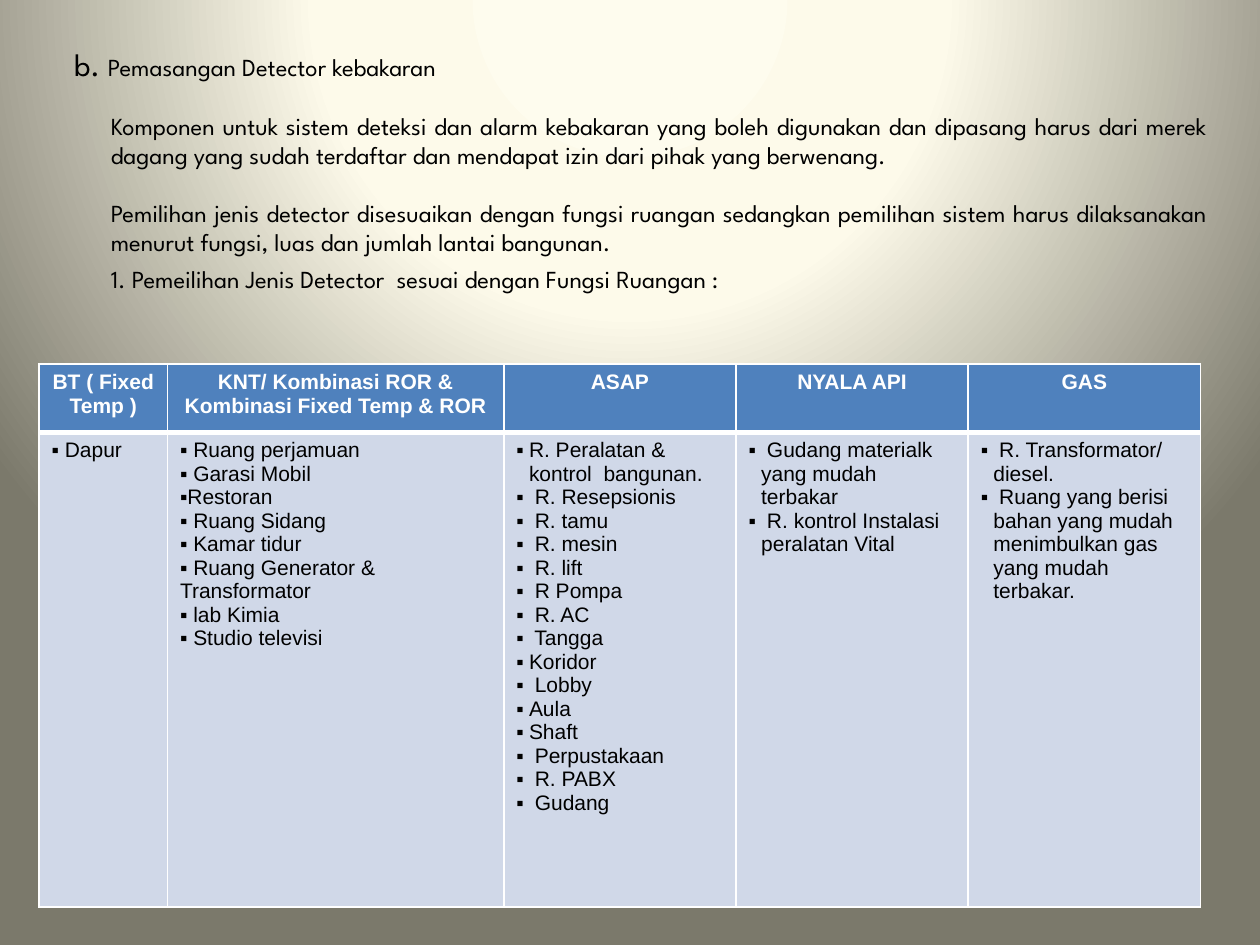
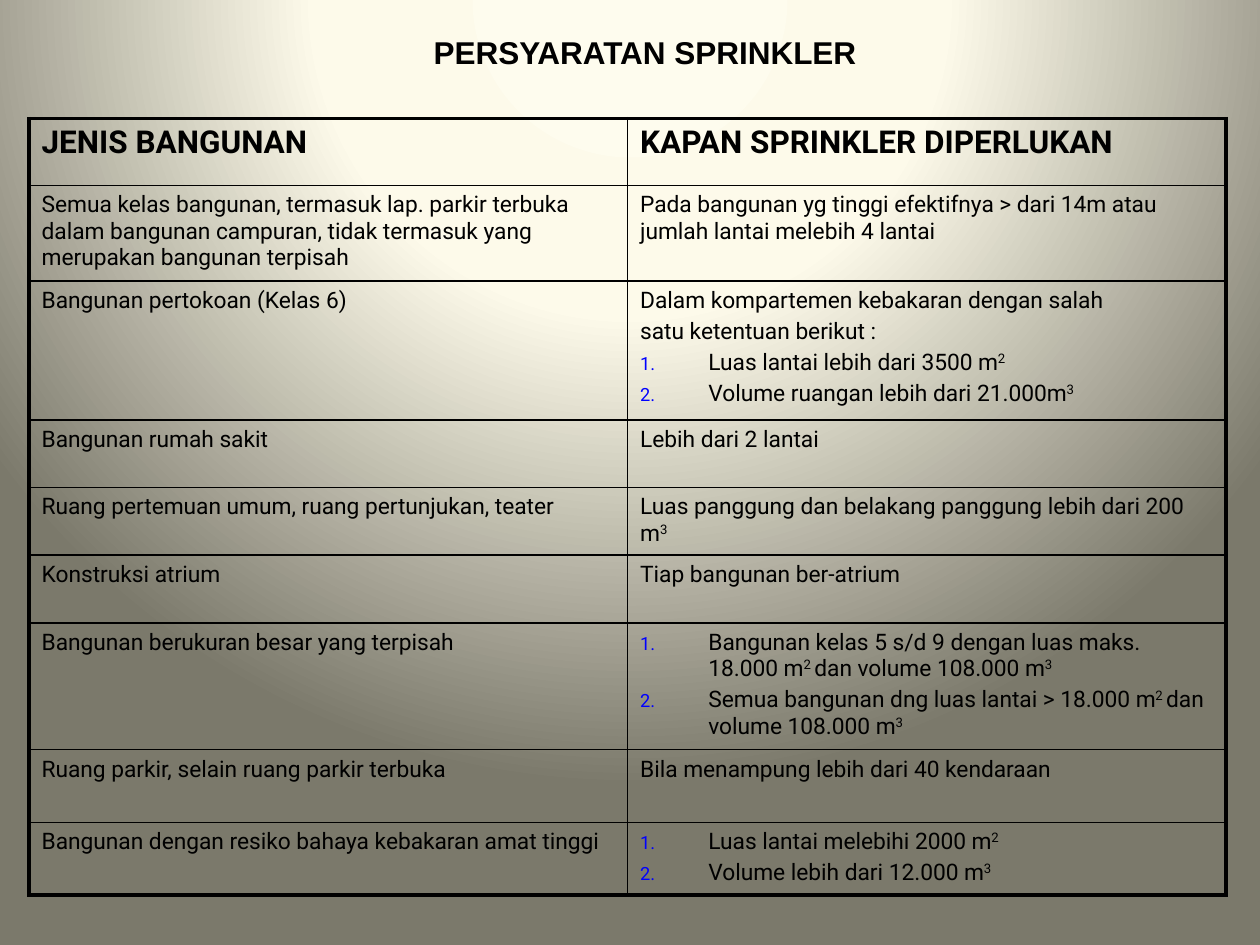
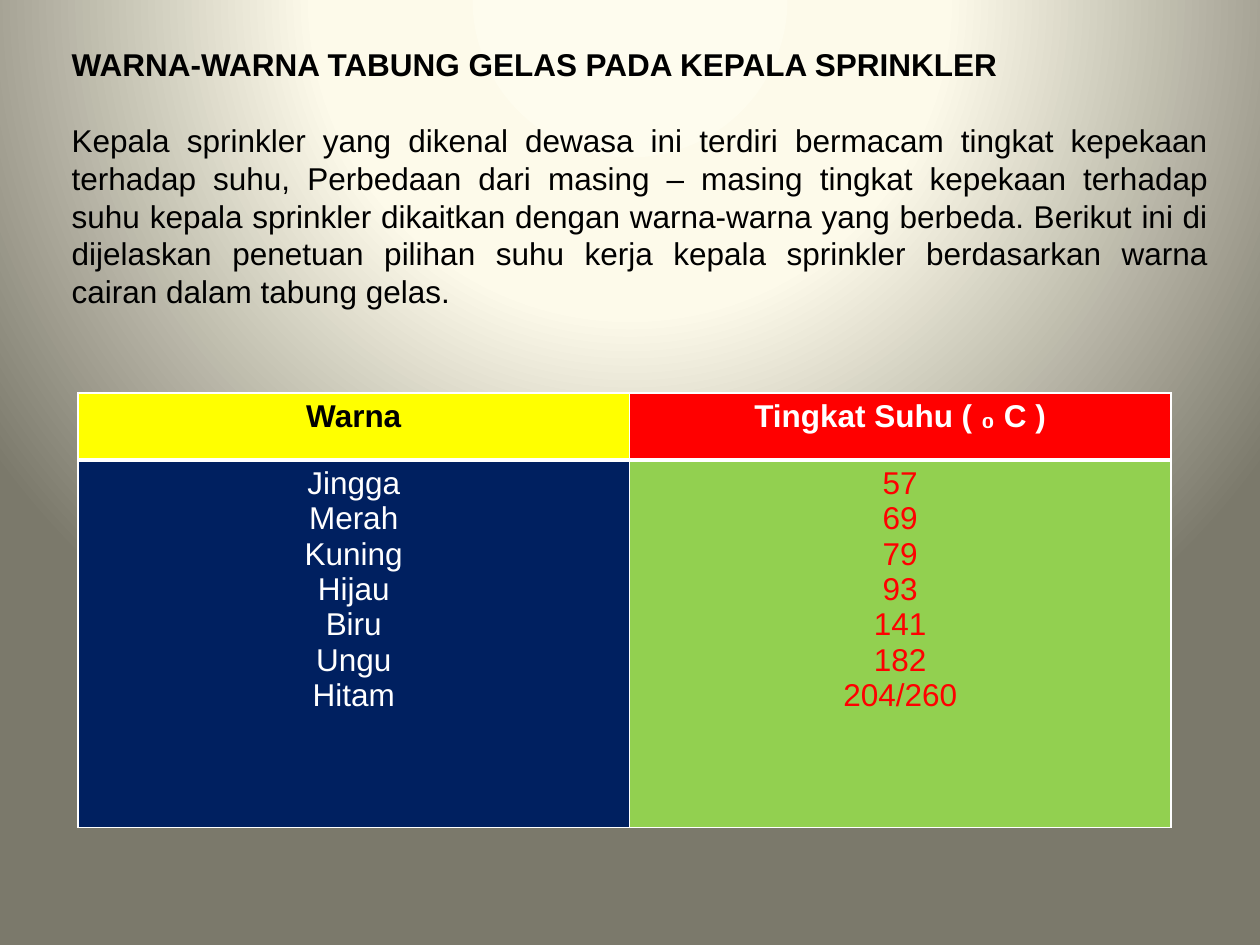
from pptx import Presentation
from pptx import util as u
from pptx.dml import color
from pptx.enum import text
from pptx.oxml import parse_xml
from pptx.oxml.ns import nsdecls

BLACK, WHITE, RED = "000000", "FFFFFF", "FF0000"
HEADER_BLUE, ROW_BLUE, NUMBER_BLUE = "4F81BD", "D0D8E8", "0000FF"
YELLOW, NAVY, GREEN = "FFFF00", "002060", "92D050"
LEFT, CENTER, JUSTIFY = text.PP_ALIGN.LEFT, text.PP_ALIGN.CENTER, text.PP_ALIGN.JUSTIFY
BACKDROP = [(0, "FEFCEE"), (40, "FDFAEA"), (100, "7B796B")]


def rgb(code):
    return color.RGBColor.from_string(code)


def add_grid(slide, left, top, widths, heights, rows, font, sizes, line, outer, divider):
    table = slide.shapes.add_table(
        len(heights), len(widths), u.Pt(left), u.Pt(top),
        u.Pt(sum(widths)), u.Pt(sum(heights))).table
    table.first_row = table.horz_banding = False
    for column, width in zip(table.columns, widths):
        column.width = u.Pt(width)
    last_row, last_column = len(heights) - 1, len(widths) - 1
    for r, (row, height) in enumerate(zip(table.rows, heights)):
        row.height = u.Pt(height)
        size = sizes[0] if r == 0 else sizes[1]
        for c, cell in enumerate(row.cells):
            edges = {
                "lnL": outer if c == 0 else 1,
                "lnR": outer if c == last_column else 1,
                "lnT": outer if r == 0 else divider if r == 1 else 1,
                "lnB": outer if r == last_row else divider if r == 0 else 1,
            }
            for edge, weight in edges.items():
                cell._tc.get_or_add_tcPr().append(parse_xml(
                    f'<a:{edge} {nsdecls("a")} w="{u.Pt(weight)}"><a:solidFill>'
                    f'<a:srgbClr val="{line}"/></a:solidFill></a:{edge}>'))
            cell.fill.background()
            for i, entry in enumerate(rows[r][c]):
                frame = cell.text_frame
                para = frame.paragraphs[0] if i == 0 else frame.add_paragraph()
                for n, piece in enumerate(entry.lstrip("▪#").split("|")):
                    span = para.add_run()
                    span.text = piece
                    span.font.name, span.font.size = font, u.Pt(size)
                    span.font.bold = r == 0
                    span.font.color.rgb = rgb(BLACK)
                    if n % 2:
                        span.font._element.set("baseline", "30000")
                bullets = []
                if entry[0] == "▪":
                    bullets = ['buFont {} typeface="Arial"/>', 'buChar {} char="▪"/>']
                elif entry[0] == "#":
                    para.space_before = u.Pt(size / 5)
                    bullets = ['buClr {}><a:srgbClr val="' + NUMBER_BLUE + '"/></a:buClr>',
                               'buSzPct {} val="80000"/>',
                               'buAutoNum {} type="arabicPeriod"/>']
                    para._p.get_or_add_pPr().set("marL", str(u.Pt(39)))
                    para._p.get_or_add_pPr().set("indent", str(u.Pt(-39)))
                for bullet in bullets:
                    para._p.get_or_add_pPr().append(
                        parse_xml("<a:" + bullet.replace("{}", nsdecls("a"))))
    return table


deck = Presentation()
deck.slide_width, deck.slide_height = u.Pt(720), u.Pt(540)

stops = "".join(f'<a:gs pos="{at * 1000}"><a:srgbClr val="{code}"/></a:gs>'
                for at, code in BACKDROP)
common = deck.slide_master._element.cSld
for old in common.findall("{*}bg"):
    common.remove(old)
common.insert(0, parse_xml(
    f'<p:bg {nsdecls("p", "a")}><p:bgPr><a:gradFill rotWithShape="1"><a:gsLst>{stops}</a:gsLst>'
    '<a:path path="circle"><a:fillToRect l="50000" t="-80000" r="50000" b="180000"/></a:path>'
    '</a:gradFill><a:effectLst/></p:bgPr></p:bg>'))

headings = [
    (1, (28.1, 22.3, 669.6, 30), ["b. ", "Pemasangan Detector kebakaran"],
     "League Spartan", [18, 14], False, LEFT, 21.3, 7),
    (5, (151.9, 16.6, 433.4, 28.8), ["PERSYARATAN SPRINKLER"],
     "Arial", [18], True, CENTER, 20.1, 0),
    (1, (33.8, 22.3, 663.8, 30), ["WARNA-WARNA TABUNG GELAS PADA KEPALA SPRINKLER"],
     "Arial", [18], True, LEFT, 21.6, 0),
]
slides = []
for layout, place, pieces, font, sizes, bold, align, pitch, margin in headings:
    slide = deck.slides.add_slide(deck.slide_layouts[layout])
    slides.append(slide)
    title = slide.shapes.title
    title.left, title.top, title.width, title.height = map(u.Pt, place)
    frame = title.text_frame
    frame.auto_size = text.MSO_AUTO_SIZE.NONE
    frame.vertical_anchor = text.MSO_ANCHOR.TOP
    para = frame.paragraphs[0]
    para.alignment, para.line_spacing = align, u.Pt(pitch)
    para._p.get_or_add_pPr().set("marL", str(u.Pt(margin)))
    for piece, size in zip(pieces, sizes):
        span = para.add_run()
        span.text = piece
        span.font.name, span.font.size, span.font.bold = font, u.Pt(size), bold
        span.font.color.rgb = rgb(BLACK)
detectors, requirements, colours = slides

bodies = [
    (detectors, (28.1, 59.8, 669.6, 117), "League Spartan", 14, 16.6, 28, [
        (0, "Komponen untuk sistem deteksi dan alarm kebakaran yang boleh digunakan dan dipasang "
            "harus dari merek dagang yang sudah terdaftar dan mendapat izin dari pihak yang "
            "berwenang."),
        (16.6, "Pemilihan jenis detector disesuaikan dengan fungsi ruangan sedangkan pemilihan "
               "sistem harus dilaksanakan menurut fungsi, luas dan jumlah lantai bangunan."),
        (4.5, "1. Pemeilihan Jenis Detector  sesuai dengan Fungsi Ruangan :"),
    ]),
    (colours, (33.8, 65.5, 663.8, 117), "Arial", 18, 21.6, 0, [
        (0, "Kepala sprinkler yang dikenal dewasa ini terdiri bermacam tingkat kepekaan terhadap "
            "suhu, Perbedaan dari masing – masing tingkat kepekaan terhadap suhu kepala sprinkler "
            "dikaitkan dengan warna-warna yang berbeda. Berikut ini di dijelaskan penetuan "
            "pilihan suhu kerja kepala sprinkler berdasarkan warna cairan dalam tabung gelas."),
    ]),
]
for slide, place, font, size, pitch, margin, entries in bodies:
    body = slide.placeholders[1]
    body.left, body.top, body.width, body.height = map(u.Pt, place)
    frame = body.text_frame
    frame.auto_size = text.MSO_AUTO_SIZE.NONE
    for i, (gap, entry) in enumerate(entries):
        para = frame.paragraphs[0] if i == 0 else frame.add_paragraph()
        para.text = entry
        para.alignment, para.line_spacing, para.space_before = JUSTIFY, u.Pt(pitch), u.Pt(gap)
        para.font.name, para.font.size = font, u.Pt(size)
        para.font.color.rgb = rgb(BLACK)
        properties = para._p.get_or_add_pPr()
        properties.set("marL", str(u.Pt(margin)))
        properties.set("indent", "0")
        properties.insert_element_before(
            parse_xml(f'<a:buNone {nsdecls("a")}/>'), "a:tabLst", "a:defRPr", "a:extLst")
        for span in para.runs:
            span.font.name, span.font.size = font, u.Pt(size)
            span.font.color.rgb = rgb(BLACK)

detector_rows = [
    [["BT ( Fixed Temp )"], ["KNT/ Kombinasi ROR & Kombinasi Fixed Temp & ROR"],
     ["ASAP"], ["NYALA API"], ["GAS"]],
    [["▪ Dapur"],
     ["▪ Ruang perjamuan", "▪ Garasi Mobil", "▪Restoran", "▪ Ruang Sidang", "▪ Kamar tidur",
      "▪ Ruang Generator & Transformator", "▪ lab Kimia", "▪ Studio televisi"],
     ["▪R. Peralatan & kontrol  bangunan.", "▪ R. Resepsionis", "▪ R. tamu", "▪ R. mesin",
      "▪ R. lift", "▪ R Pompa", "▪ R. AC", "▪ Tangga", "▪Koridor", "▪ Lobby", "▪Aula",
      "▪Shaft", "▪ Perpustakaan", "▪ R. PABX", "▪ Gudang"],
     ["▪ Gudang materialk yang mudah terbakar", "▪ R. kontrol Instalasi peralatan Vital"],
     ["▪ R. Transformator/ diesel.",
      "▪ Ruang yang berisi bahan yang mudah menimbulkan gas yang mudah terbakar."]],
]
table = add_grid(detectors, 22.3, 208.1, [73.4, 192.2] + [132.7] * 3, [38.9, 271.4],
                 detector_rows, "Arial", (12, 12), WHITE, 1, 3)
for c in range(5):
    header, rooms = table.cell(0, c), table.cell(1, c)
    for cell, fill in ((header, HEADER_BLUE), (rooms, ROW_BLUE)):
        cell.fill.solid()
        cell.fill.fore_color.rgb = rgb(fill)
    header.text_frame.paragraphs[0].alignment = CENTER
    header.text_frame.paragraphs[0].runs[0].font.color.rgb = rgb(WHITE)
    for para in rooms.text_frame.paragraphs:
        hang = 7.2 if c > 1 else 0
        para._p.get_or_add_pPr().set("marL", str(u.Pt(hang)))
        para._p.get_or_add_pPr().set("indent", str(u.Pt(-hang)))

requirement_rows = [
    [["JENIS BANGUNAN"], ["KAPAN SPRINKLER DIPERLUKAN"]],
    [["Semua kelas bangunan, termasuk lap. parkir terbuka dalam bangunan campuran, "
      "tidak termasuk yang merupakan bangunan terpisah"],
     ["Pada bangunan yg tinggi efektifnya > dari 14m atau jumlah lantai melebih 4 lantai"]],
    [["Bangunan pertokoan (Kelas 6)"],
     ["Dalam kompartemen kebakaran dengan salah", "satu ketentuan berikut :",
      "#Luas lantai lebih dari 3500 m|2", "#Volume ruangan lebih dari 21.000m|3"]],
    [["Bangunan rumah sakit"], ["Lebih dari 2 lantai"]],
    [["Ruang pertemuan umum, ruang pertunjukan, teater"],
     ["Luas panggung dan belakang panggung lebih dari 200 m|3"]],
    [["Konstruksi atrium"], ["Tiap bangunan ber-atrium"]],
    [["Bangunan berukuran besar yang terpisah"],
     ["#Bangunan kelas 5 s/d 9 dengan luas maks. 18.000 m|2 |dan volume 108.000 m|3",
      "#Semua bangunan dng luas lantai > 18.000 m|2 |dan volume 108.000 m|3"]],
    [["Ruang parkir, selain ruang parkir terbuka"], ["Bila menampung lebih dari 40 kendaraan"]],
    [["Bangunan dengan resiko bahaya kebakaran amat tinggi"],
     ["#Luas lantai melebihi 2000 m|2", "#Volume lebih dari 12.000 m|3"]],
]
table = add_grid(requirements, 16.6, 67.7, [342, 342],
                 [38.3, 54.7, 79.2, 38.7, 38.7, 38.7, 72.5, 41.5, 41.5],
                 requirement_rows, "Roboto", (18, 13), BLACK, 2.25, 1)
table.cell(2, 1).text_frame.paragraphs[1].space_before = u.Pt(2.6)

temperatures = {"Jingga": "57", "Merah": "69", "Kuning": "79", "Hijau": "93",
                "Biru": "141", "Ungu": "182", "Hitam": "204/260"}
colour_rows = [
    [["Warna"], ["Tingkat Suhu ( ₀ C )"]],
    [list(temperatures), list(temperatures.values())],
]
table = add_grid(colours, 44.6, 224.6, [315.1, 309.4], [38.2, 210.2],
                 colour_rows, "Arial", (18, 18), WHITE, 1, 3)
cell_colours = [(YELLOW, BLACK), (RED, WHITE), (NAVY, WHITE), (GREEN, RED)]
for cell, (fill, ink) in zip(table.iter_cells(), cell_colours):
    cell.fill.solid()
    cell.fill.fore_color.rgb = rgb(fill)
    for para in cell.text_frame.paragraphs:
        para.alignment = CENTER
        para.runs[0].font.color.rgb = rgb(ink)

deck.save("out.pptx")
